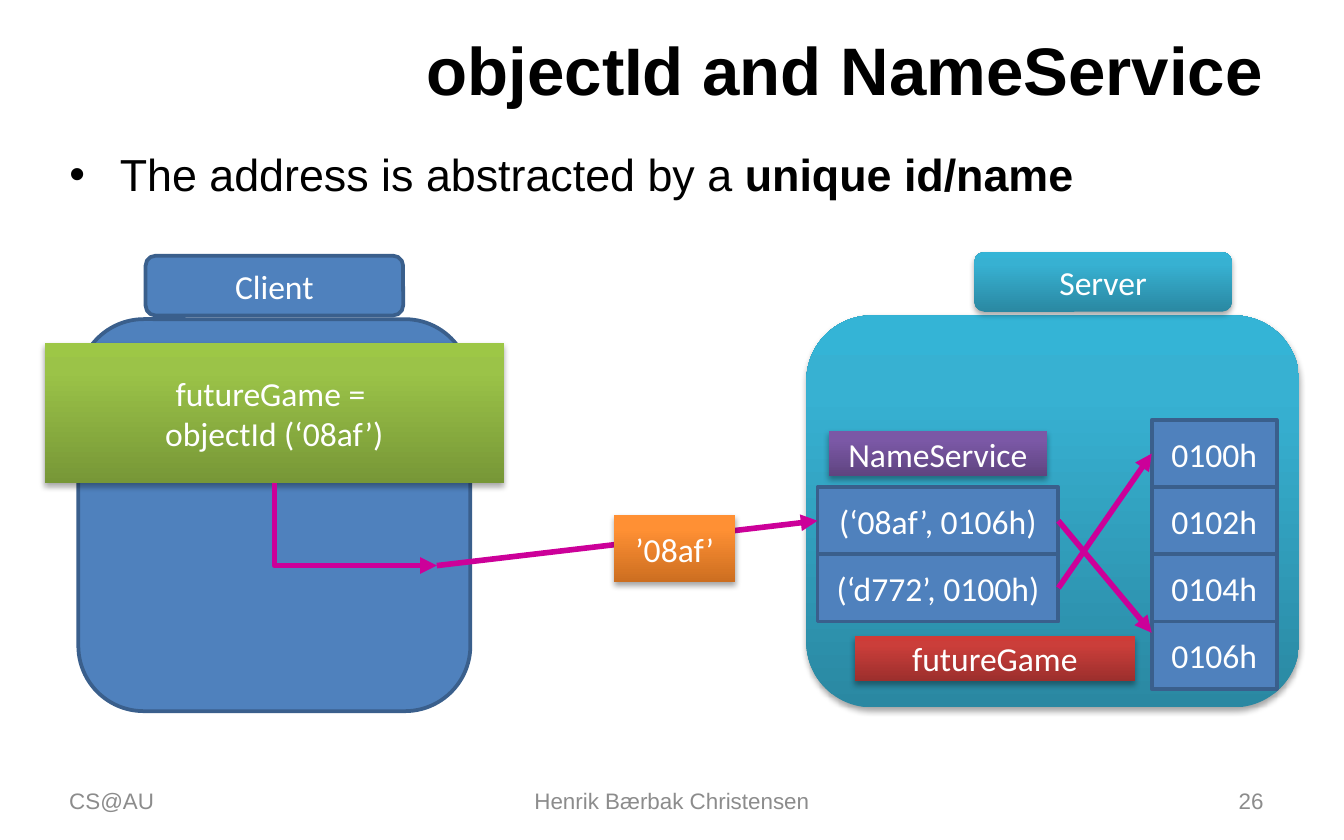
from lxml.etree import SubElement
from pptx import Presentation
from pptx.dml.color import RGBColor
from pptx.enum.shapes import MSO_CONNECTOR, MSO_SHAPE
from pptx.enum.text import MSO_ANCHOR, PP_ALIGN
from pptx.oxml import parse_xml
from pptx.oxml.ns import nsdecls, qn
from pptx.util import Pt

BLACK = RGBColor(0, 0, 0)
WHITE = RGBColor(255, 255, 255)
GREY = RGBColor(0x8C, 0x8C, 0x8C)
BLUE = RGBColor(0x4F, 0x81, 0xBD)
NAVY = RGBColor(0x3A, 0x5F, 0x8C)
PINK = RGBColor(0xCC, 0, 0x99)


def ramp(*codes):
    return [RGBColor.from_string(code) for code in codes]


TEAL = ramp("2A88A2", "37B1D2", "34B4D6")
GREEN = ramp("779737", "9BC348", "9DC746")
ORANGE = ramp("CC6E20", "FF9034", "FF9136")
RED = ramp("9C2F2D", "CB3E3A", "CE3B37")
PURPLE = ramp("5F4480", "7B58A6", "7C57A8")

ROUND, RECT = MSO_SHAPE.ROUNDED_RECTANGLE, MSO_SHAPE.RECTANGLE
LEFT, MID, RIGHT = PP_ALIGN.LEFT, PP_ALIGN.CENTER, PP_ALIGN.RIGHT

TITLE = "objectId and NameService"
POINT = [("The address is abstracted by a ", False), ("unique id/name", True)]
FOOTER = [
    ("CS@AU", 30, 168, LEFT),
    ("Henrik Bærbak Christensen", 246, 228, MID),
    ("26", 516, 168, RIGHT),
]
HOSTS = [
    ("", ROUND, TEAL, (432, 169, 264, 210)),
    ("Server", ROUND, TEAL, (522, 135, 138, 32)),
    ("", ROUND, BLUE, (42, 171, 210, 210)),
    ("futureGame = \vobjectId (‘08af’)", RECT, GREEN, (24, 183.75, 246, 75)),
    ("Client", ROUND, BLUE, (78, 137, 138, 32)),
]
ROW = 36
GRIDS = [
    (617, 225, 67, ["0100h", "0102h", "0104h", "0106h"]),
    (438, 261, 129, ["(‘08af’, 0106h)", "(‘d772’, 0100h)"]),
]
ARROWS = [
    ((234, 303), (438, 279)),
    ((567, 279), (617, 339)),
    ((567, 315), (617, 243)),
]
LABELS = [
    ("’08af’", RECT, ORANGE, (329, 276, 65, 36)),
    ("futureGame", RECT, RED, (458, 340.75, 150, 24)),
    ("NameService", RECT, PURPLE, (444, 231, 117, 24)),
]

deck = Presentation()
deck.slide_width, deck.slide_height = Pt(720), Pt(450)
slide = deck.slides.add_slide(deck.slide_layouts[1])
shapes = slide.shapes


def place(shape, x, y, w, h):
    shape.left, shape.top, shape.width, shape.height = map(Pt, (x, y, w, h))


def style(para, face, size, color, align):
    para.alignment = align
    font = para.font
    font.name, font.size, font.color.rgb = face, Pt(size), color


def shade(shape, colors):
    stops = "".join(
        f'<a:gs pos="{pos}000"><a:srgbClr val="{color}"/></a:gs>'
        for pos, color in zip((0, 80, 100), colors)
    )
    shape.fill.background()
    props = shape._element.spPr
    blank = props.find(qn("a:noFill"))
    props.replace(blank, parse_xml(
        f'<a:gradFill {nsdecls("a")} rotWithShape="1"><a:gsLst>{stops}</a:gsLst>'
        '<a:lin ang="16200000" scaled="0"/></a:gradFill>'))
    shape.line.fill.background()
    props.find(qn("a:effectLst")).append(parse_xml(
        f'<a:outerShdw {nsdecls("a")} blurRad="40000" dist="23000" dir="5400000"'
        ' rotWithShape="0"><a:srgbClr val="000000"><a:alpha val="35000"/>'
        '</a:srgbClr></a:outerShdw>'))


def box(text, kind, fill, spot):
    shape = shapes.add_shape(kind, *map(Pt, spot))
    shape.shadow.inherit = False
    if isinstance(fill, list):
        shade(shape, fill)
    else:
        shape.fill.solid()
        shape.fill.fore_color.rgb = fill
        shape.line.color.rgb, shape.line.width = NAVY, Pt(2)
    if text:
        frame = shape.text_frame
        frame.text = text
        frame.word_wrap = True
        frame.vertical_anchor = MSO_ANCHOR.MIDDLE
        style(frame.paragraphs[0], "Calibri", 18, WHITE, MID)


def arrow(start, end, kind=MSO_CONNECTOR.STRAIGHT):
    link = shapes.add_connector(kind, *map(Pt, start + end))
    link.line.color.rgb, link.line.width = PINK, Pt(3)
    props = link._element.spPr
    SubElement(props.find(qn("a:ln")), qn("a:tailEnd"), type="triangle")
    SubElement(props, qn("a:effectLst"))
    return link


def elbow(start, end):
    (x1, y1), (x2, y2) = start, end
    mx, my = (x1 + x2) / 2, (y1 + y2) / 2
    dx, dy = (y2 - y1) / 2, (x2 - x1) / 2
    link = arrow((mx + dx, my - dy), (mx - dx, my + dy), MSO_CONNECTOR.ELBOW)
    props = link._element.spPr
    props.find(qn("a:xfrm")).set("rot", "16200000")
    props.find(qn("a:prstGeom")).set("prst", "bentConnector2")


for item in HOSTS[:3]:
    box(*item)

title = shapes.title
place(title, 36, 13, 648, 47)
title.text_frame.text = TITLE
title.text_frame.vertical_anchor = MSO_ANCHOR.MIDDLE
head = title.text_frame.paragraphs[0]
style(head, "Arial", 36, BLACK, RIGHT)
head.font.bold = True

body = slide.placeholders[1]
place(body, 30, 75, 654, 340)
para = body.text_frame.paragraphs[0]
for text, bold in POINT:
    run = para.add_run()
    run.text, run.font.bold = text, bold
props = para._p.get_or_add_pPr()
props.set("marL", str(Pt(27)))
props.set("indent", str(-Pt(27)))
SubElement(props, qn("a:buChar"), char="•")
style(para, "Arial", 24, BLACK, LEFT)

for text, x, w, align in FOOTER:
    frame = shapes.add_textbox(Pt(x), Pt(417), Pt(w), Pt(24)).text_frame
    frame.word_wrap = True
    frame.vertical_anchor = MSO_ANCHOR.MIDDLE
    frame.text = text
    style(frame.paragraphs[0], "Arial", 12, GREY, align)

for item in HOSTS[3:]:
    box(*item)
for x, y, w, names in GRIDS:
    for i, name in enumerate(names):
        box(name, RECT, BLUE, (x, y + i * ROW, w, ROW))
elbow((147, 259), (234, 303))
for start, end in ARROWS:
    arrow(start, end)
for item in LABELS:
    box(*item)

deck.save("out.pptx")
